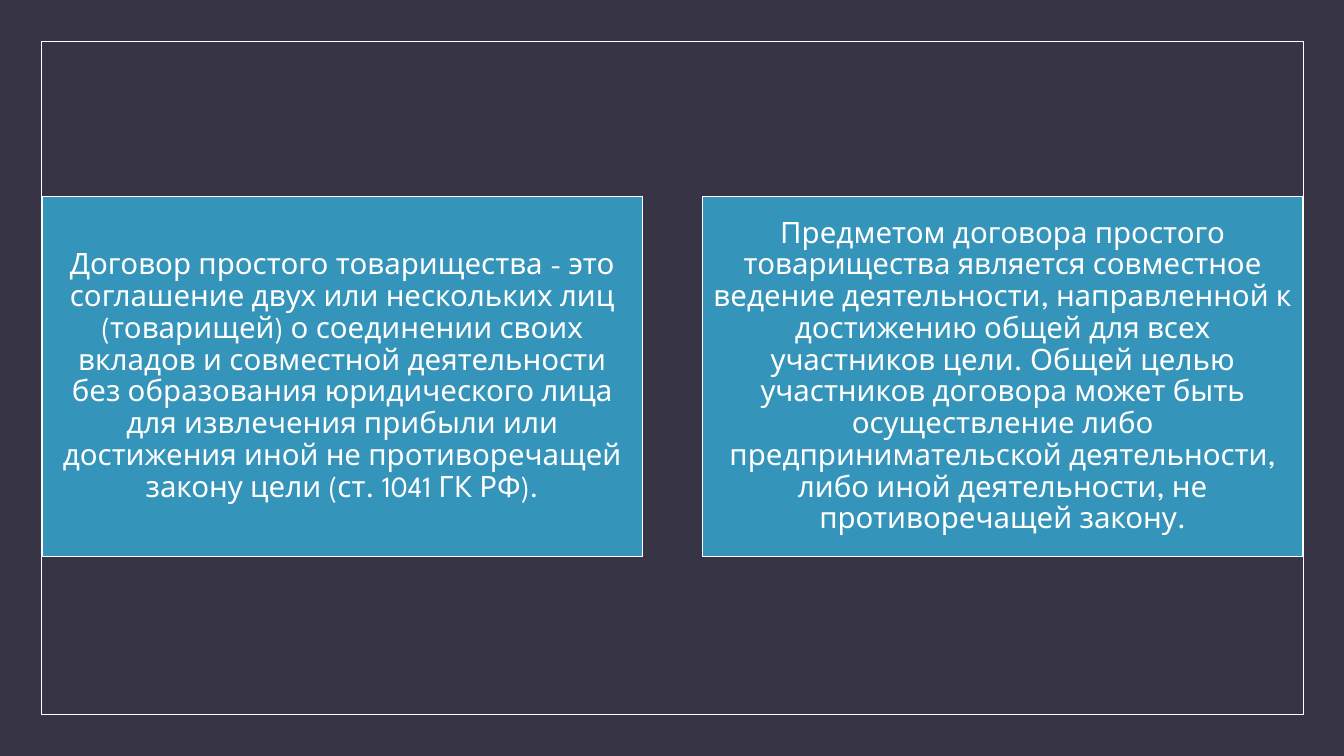
"""Build a slide with two text cards about the simple partnership contract."""
from pptx import Presentation
from pptx.dml.color import RGBColor
from pptx.enum import shapes, text
from pptx.util import Inches, Pt

CARDS = [
    "Договор простого товарищества - это соглашение двух или нескольких лиц (товарищей) "
    "о соединении своих вкладов и совместной деятельности без образования юридического лица "
    "для извлечения прибыли или достижения иной не противоречащей закону цели (ст. 1041 ГК РФ).",
    "Предметом договора простого товарищества является совместное ведение деятельности, "
    "направленной к достижению общей для всех участников цели. Общей целью участников договора "
    "может быть осуществление либо предпринимательской деятельности, либо иной деятельности, "
    "не противоречащей закону.",
]
FONT = "League Spartan"
DARK = RGBColor(0x37, 0x35, 0x45)
BLUE = RGBColor(0x34, 0x94, 0xBA)
WHITE = RGBColor(0xFF, 0xFF, 0xFF)
LEFT, TOP, WIDTH, HEIGHT, GAP = 0.42, 1.95, 5.95, 3.57, 0.6


def add_box(page, left, top, width, height, line_width):
    box = page.shapes.add_shape(
        shapes.MSO_SHAPE.RECTANGLE, Inches(left), Inches(top), Inches(width), Inches(height))
    box.shadow.inherit = False
    box.fill.background()
    box.line.color.rgb = WHITE
    box.line.width = Pt(line_width)
    return box


def add_card(page, left, wording):
    box = add_box(page, left, TOP, WIDTH, HEIGHT, 1)
    box.fill.solid()
    box.fill.fore_color.rgb = BLUE
    frame = box.text_frame
    frame.word_wrap = True
    frame.vertical_anchor = text.MSO_ANCHOR.MIDDLE
    frame.margin_left = frame.margin_right = Inches(0.09)
    frame.margin_top = frame.margin_bottom = Inches(0.09)
    para = frame.paragraphs[0]
    para.text = wording
    para.alignment = text.PP_ALIGN.CENTER
    para.line_spacing = 0.9
    para.font.name = FONT
    para.font.size = Pt(21)
    para.font.color.rgb = WHITE


def main():
    deck = Presentation()
    deck.slide_width, deck.slide_height = Inches(13.33), Inches(7.5)
    page = deck.slides.add_slide(deck.slide_layouts[6])
    page.background.fill.solid()
    page.background.fill.fore_color.rgb = DARK
    add_box(page, 0.41, 0.41, 12.52, 6.68, 0.5)
    for index, wording in enumerate(CARDS):
        add_card(page, LEFT + index * (WIDTH + GAP), wording)
    deck.save("out.pptx")


if __name__ == "__main__":
    main()
